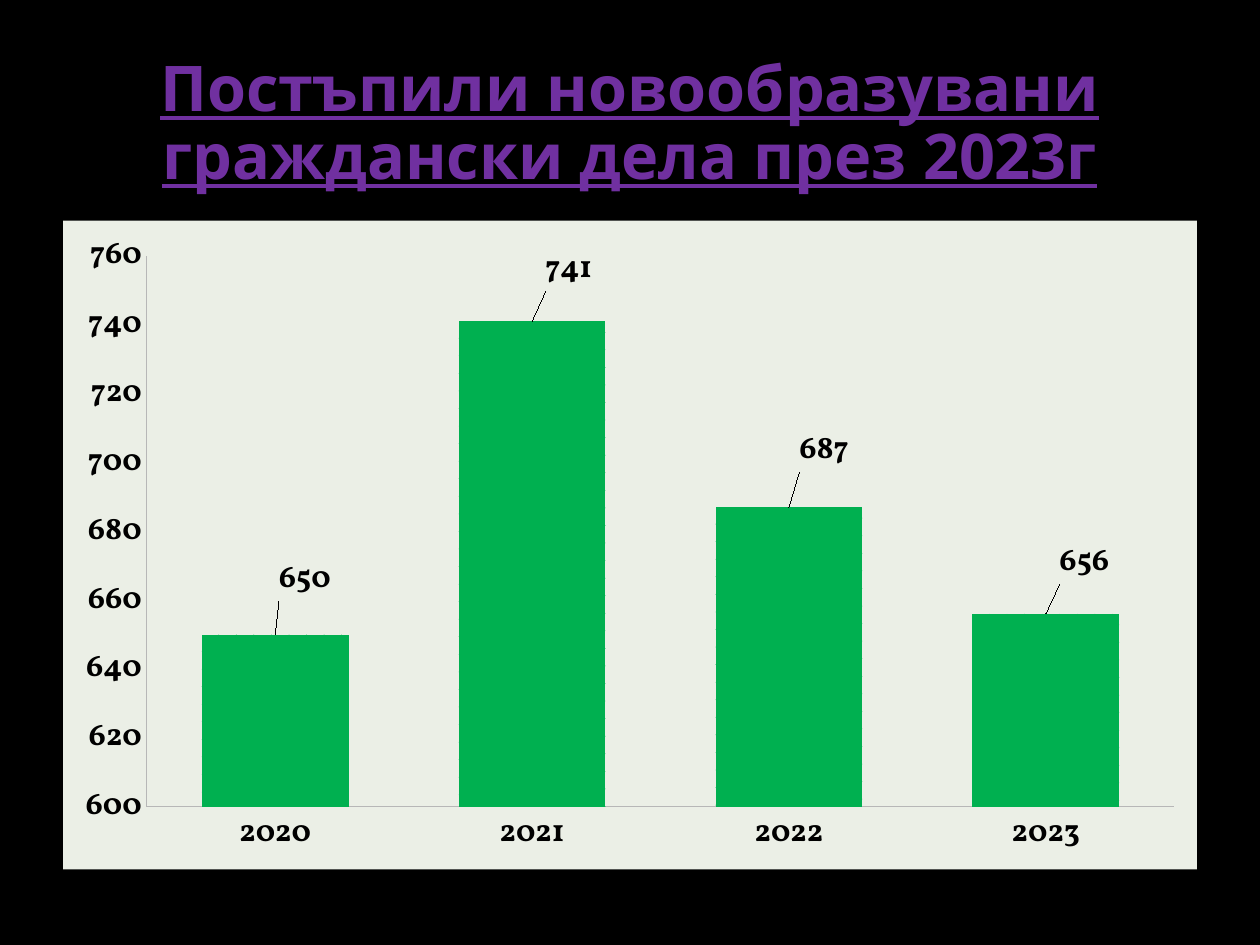
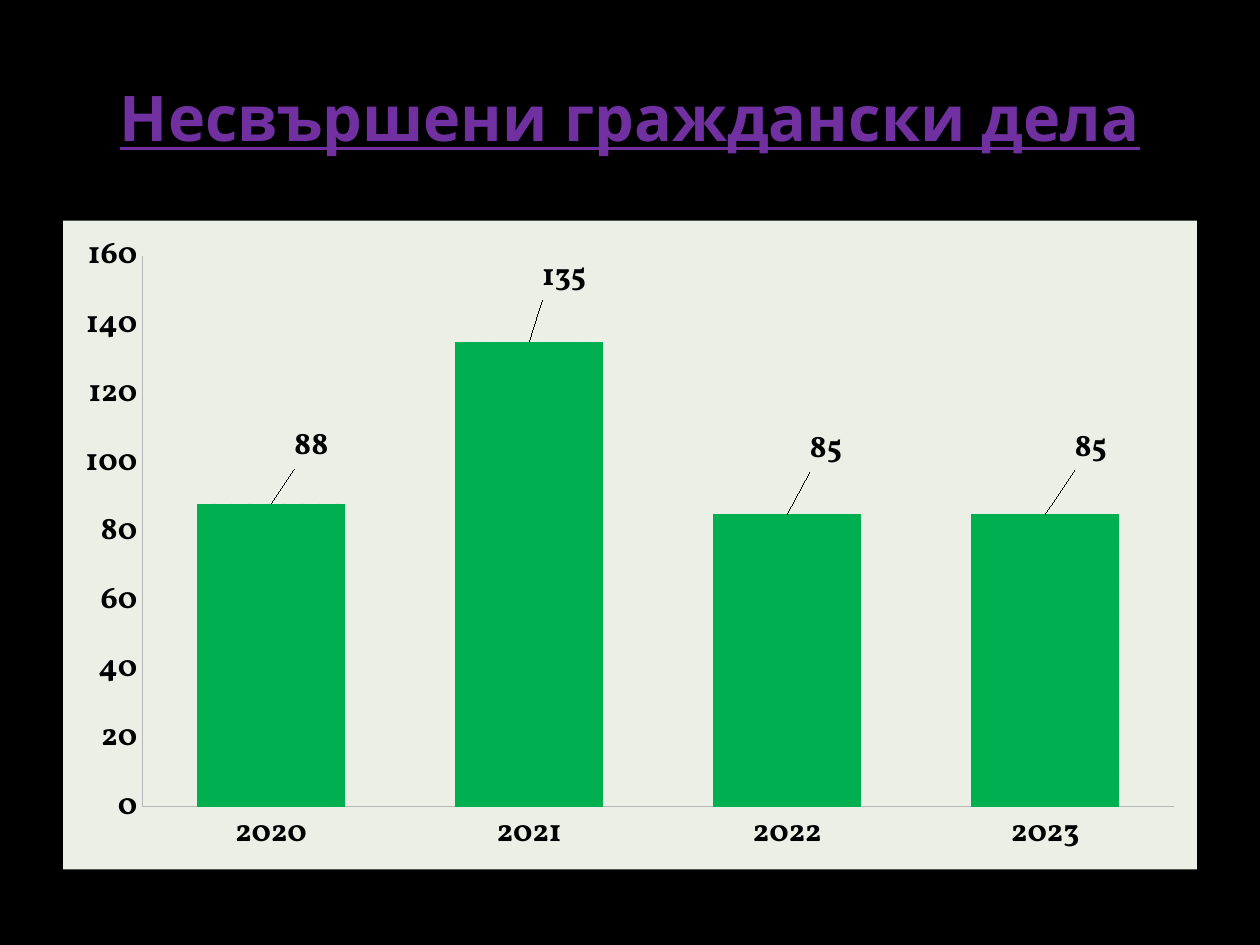
from lxml import etree
from pptx import Presentation
from pptx.chart.data import CategoryChartData
from pptx.dml.color import RGBColor
from pptx.enum import chart as ch, dml, text
from pptx.oxml.ns import qn
from pptx.util import Pt

YEARS = ["2020", "2021", "2022", "2023"]
# Each label shift is (right, up) in points from its usual place over the bar
SLIDES = [
    {"title": "Постъпили новообразувани граждански дела през 2023г",
     "cases": [650, 741, 687, 656],
     "scale": (600, 760, 20),
     "label_shifts": [(17, 16), (21, 14), (20, 17), (22, 14)]},
    {"title": "Несвършени граждански дела",
     "cases": [88, 135, 85, 85],
     "scale": (0, 160, 20),
     "label_shifts": [(23, 17), (20, 21), (22, 21), (26, 22)]},
]

# Shared look
BACKGROUND, PANEL, BAR = "000000", "EBEFE6", "00B050"
TITLE_COLOR, LABEL_COLOR, AXIS_COLOR = "7030A0", "000000", "B7B7B7"
TITLE_FONT, CHART_FONT = "Open Sans", "Vollkorn"
MARGIN, CONTENT_W = 36, 648
TITLE_TOP, TITLE_H = 21.6, 90
CHART_TOP, CHART_H = 126, 370.8


def rgb(value):
    return RGBColor.from_string(value)


def style_font(font, name, size, color):
    font.name, font.size, font.bold = name, Pt(size), True
    font.color.rgb = rgb(color)


def add_title(slide, wording):
    box = slide.shapes.add_textbox(Pt(MARGIN), Pt(TITLE_TOP), Pt(CONTENT_W), Pt(TITLE_H))
    frame = box.text_frame
    frame.word_wrap = True
    frame.auto_size = text.MSO_AUTO_SIZE.TEXT_TO_FIT_SHAPE
    frame.vertical_anchor = text.MSO_ANCHOR.MIDDLE
    line = frame.paragraphs[0]
    line.alignment = text.PP_ALIGN.CENTER
    run = line.add_run()
    run.text = wording
    style_font(run.font, TITLE_FONT, 36, TITLE_COLOR)
    run.font.underline = True


def shift_label(label, right, up):
    label.position = ch.XL_LABEL_POSITION.OUTSIDE_END
    dlbl = label._get_or_add_dLbl()
    layout = etree.Element(qn("c:layout"))
    manual = etree.SubElement(layout, qn("c:manualLayout"))
    for axis, share in (("x", right / CONTENT_W), ("y", -up / CHART_H)):
        etree.SubElement(manual, qn("c:" + axis)).set("val", f"{share:.4f}")
    dlbl.find(qn("c:idx")).addnext(layout)


def add_case_chart(slide, cases, scale, label_shifts):
    data = CategoryChartData()
    data.categories = YEARS
    data.add_series("Series 1", cases)
    chart = slide.shapes.add_chart(
        ch.XL_CHART_TYPE.COLUMN_CLUSTERED, Pt(MARGIN), Pt(CHART_TOP),
        Pt(CONTENT_W), Pt(CHART_H), data).chart
    chart.has_legend = chart.has_title = False
    style_font(chart.font, CHART_FONT, 18, LABEL_COLOR)

    # Panel behind the chart
    panel = etree.Element(qn("c:spPr"))
    fill = etree.SubElement(panel, qn("a:solidFill"))
    etree.SubElement(fill, qn("a:srgbClr")).set("val", PANEL)
    etree.SubElement(etree.SubElement(panel, qn("a:ln")), qn("a:noFill"))
    chart._chartSpace.find(qn("c:chart")).addnext(panel)

    # Axes
    values = chart.value_axis
    values.minimum_scale, values.maximum_scale, values.major_unit = scale
    for axis in (chart.category_axis, values):
        axis.has_major_gridlines = False
        axis.major_tick_mark = axis.minor_tick_mark = ch.XL_TICK_MARK.NONE
        axis.format.line.color.rgb = rgb(AXIS_COLOR)
        axis.format.line.width = Pt(0.75)
        style_font(axis.tick_labels.font, CHART_FONT, 18, LABEL_COLOR)

    # Bars
    plot = chart.plots[0]
    plot.gap_width = 75
    plot.vary_by_categories = False
    bars = plot.series[0]
    bars.format.fill.patterned()
    bars.format.fill.pattern = dml.MSO_PATTERN.PERCENT_5
    bars.format.fill.fore_color.rgb = rgb(BAR)
    bars.format.fill.back_color.rgb = rgb(BAR)

    # Values above the bars
    labels = bars.data_labels
    labels.show_value = True
    labels.position = ch.XL_LABEL_POSITION.OUTSIDE_END
    style_font(labels.font, CHART_FONT, 18, LABEL_COLOR)
    for point, (right, up) in enumerate(label_shifts):
        label = bars.points[point].data_label
        style_font(label.font, CHART_FONT, 18, LABEL_COLOR)
        shift_label(label, right, up)


def main():
    prs = Presentation()
    prs.slide_width, prs.slide_height = Pt(720), Pt(540)
    for content in SLIDES:
        slide = prs.slides.add_slide(prs.slide_layouts[6])
        slide.background.fill.solid()
        slide.background.fill.fore_color.rgb = rgb(BACKGROUND)
        add_title(slide, content["title"])
        add_case_chart(slide, content["cases"], content["scale"], content["label_shifts"])
    prs.save("out.pptx")


if __name__ == "__main__":
    main()
